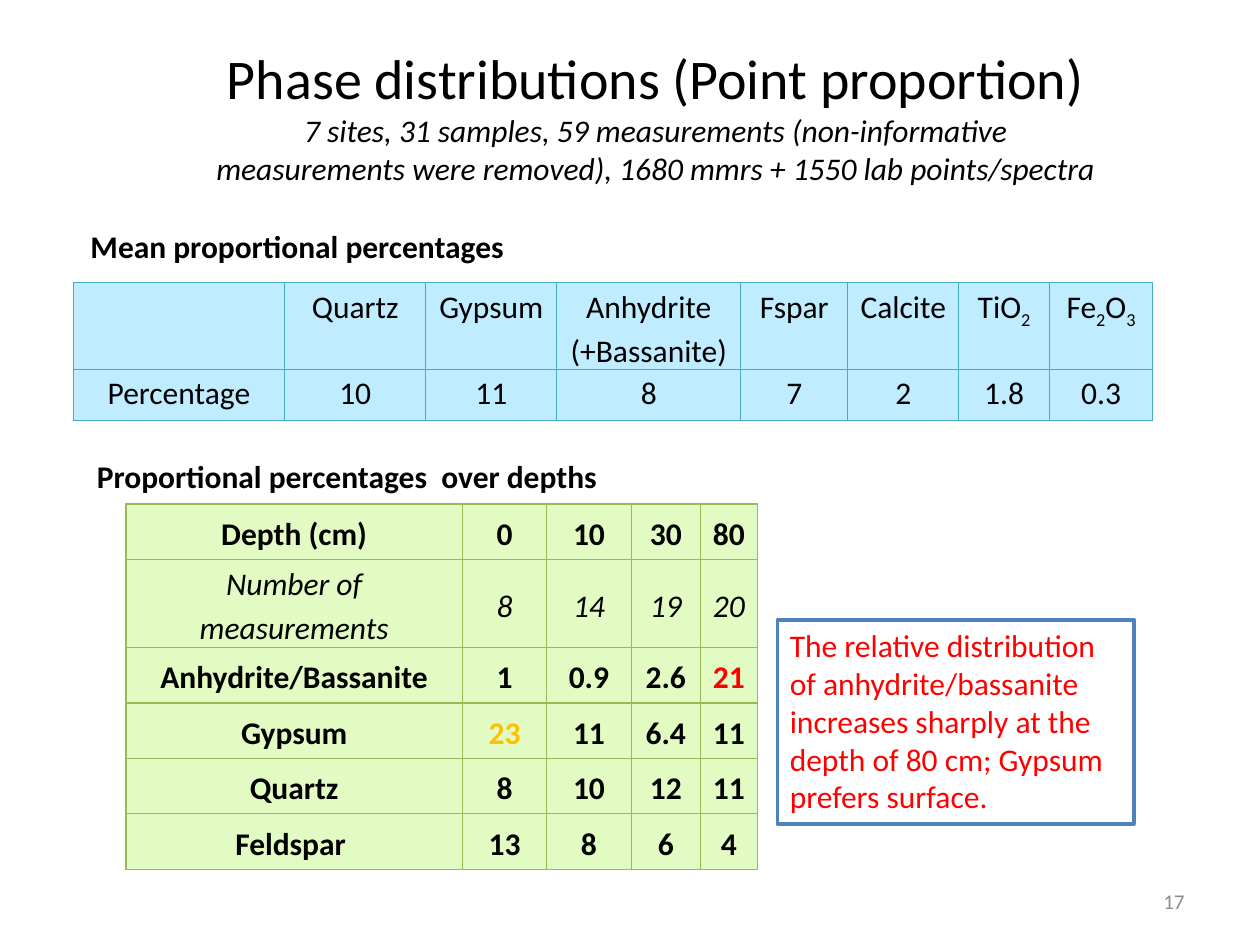
from itertools import groupby

from lxml.etree import fromstring
from pptx import Presentation
from pptx.dml.color import RGBColor
from pptx.enum.shapes import MSO_SHAPE
from pptx.enum.text import MSO_ANCHOR, PP_ALIGN
from pptx.util import Inches, Pt

BLACK = RGBColor(0x00, 0x00, 0x00)
RED = RGBColor(0xFF, 0x00, 0x00)
ORANGE = RGBColor(0xFF, 0xC0, 0x00)
GRAY = RGBColor(0x8C, 0x8C, 0x8C)
BLUE = RGBColor(0x4F, 0x81, 0xBD)
LIGHT_BLUE = RGBColor(0xBF, 0xEC, 0xFF)
TEAL = RGBColor(0x46, 0xAA, 0xC5)
LIGHT_GREEN = RGBColor(0xE2, 0xFB, 0xC2)
GREEN = RGBColor(0x98, 0xB9, 0x55)
NS = "http://schemas.openxmlformats.org/drawingml/2006/main"


def style(p, size=18, color=BLACK, bold=False, italic=False, align=PP_ALIGN.LEFT):
    p.alignment = align
    p.font.name = "Calibri"
    p.font.size = Pt(size)
    p.font.color.rgb = color
    p.font.bold = bold
    p.font.italic = italic


def add_grid(left, top, widths, heights, rows, fill, border, anchor):
    frame = slide.shapes.add_table(len(rows), len(widths), Inches(left), Inches(top),
                                   Inches(sum(widths)), Inches(sum(heights)))
    table = frame.table
    table.first_row = table.horz_banding = False
    for col, width in zip(table.columns, widths):
        col.width = Inches(width)
    for row, height, values in zip(table.rows, heights, rows):
        row.height = Inches(height)
        for cell, value in zip(row.cells, values):
            cell.fill.solid()
            cell.fill.fore_color.rgb = fill
            cell.vertical_anchor = anchor
            cell.margin_left = cell.margin_right = Inches(0.07)
            cell.margin_top = cell.margin_bottom = 0
            cell.text = value
            for p in cell.text_frame.paragraphs:
                style(p, align=PP_ALIGN.CENTER)
                p.line_spacing = 1.15
            tcPr = cell._tc.get_or_add_tcPr()
            for i, side in enumerate("LRTB"):
                tcPr.insert(i, fromstring(
                    f'<a:ln{side} xmlns:a="{NS}" w="9525"><a:solidFill>'
                    f'<a:srgbClr val="{border}"/></a:solidFill></a:ln{side}>'))
    return table


prs = Presentation()
prs.slide_width, prs.slide_height = Inches(10), Inches(7.5)
slide = prs.slides.add_slide(prs.slide_layouts[5])

title = slide.shapes.title
title.left, title.top = Inches(1.58), Inches(0.25)
title.width, title.height = Inches(7.25), Inches(1.33)
tf = title.text_frame
tf.vertical_anchor = MSO_ANCHOR.MIDDLE
p = tf.paragraphs[0]
style(p, 32, align=PP_ALIGN.CENTER)
p.add_run().text = "Phase distributions (Point proportion)"
p.add_line_break()
r = p.add_run()
r.text = ("7 sites, 31 samples, 59 measurements (non-informative measurements "
          "were removed), 1680 mmrs + 1550 lab points/spectra")
r.font.size = Pt(18)
r.font.italic = True

labels = [
    ("Mean proportional percentages", 0.62, 1.75, 4.5, 18, BLACK, True, PP_ALIGN.LEFT),
    ("Proportional percentages  over depths", 0.67, 3.58, 8.67, 18, BLACK, True, PP_ALIGN.LEFT),
    ("17", 7.17, 6.95, 2.33, 12, GRAY, False, PP_ALIGN.RIGHT),
]
for text, left, top, width, size, color, bold, align in labels:
    box = slide.shapes.add_textbox(Inches(left), Inches(top), Inches(width), Inches(0.4))
    tf = box.text_frame
    tf.word_wrap = True
    tf.vertical_anchor = MSO_ANCHOR.MIDDLE
    tf.text = text
    style(tf.paragraphs[0], size, color, bold, align=align)

mean_rows = [
    ["", "Quartz", "Gypsum", "Anhydrite\n(+Bassanite)", "Fspar", "Calcite", "", ""],
    ["Percentage", "10", "11", "8", "7", "2", "1.8", "0.3"],
]
mean_table = add_grid(0.58, 2.24, [1.68, 1.12, 1.04, 1.46, 0.85, 0.88, 0.72, 0.82],
                      [0.69, 0.41], mean_rows, LIGHT_BLUE, TEAL, MSO_ANCHOR.TOP)
for col, formula in [(6, "TiO2"), (7, "Fe2O3")]:
    p = mean_table.cell(0, col).text_frame.paragraphs[0]
    for is_digit, chars in groupby(formula, str.isdigit):
        r = p.add_run()
        r.text = "".join(chars)
        if is_digit:
            r._r.get_or_add_rPr().set("baseline", "-25000")

depth_rows = [
    ["Depth (cm)", "0", "10", "30", "80"],
    ["Number of measurements", "8", "14", "19", "20"],
    ["Anhydrite/Bassanite", "1", "0.9", "2.6", "21"],
    ["Gypsum", "23", "11", "6.4", "11"],
    ["Quartz", "8", "10", "12", "11"],
    ["Feldspar ", "13", "8", "6", "4"],
]
depth_table = add_grid(1, 4, [2.67, 0.67, 0.67, 0.55, 0.45], [0.44, 0.7] + [0.44] * 4,
                       depth_rows, LIGHT_GREEN, GREEN, MSO_ANCHOR.MIDDLE)
for i, row in enumerate(depth_table.rows):
    for cell in row.cells:
        font = cell.text_frame.paragraphs[0].font
        font.bold = i != 1
        font.italic = i == 1
for row, col, color in [(2, 4, RED), (3, 1, ORANGE)]:
    depth_table.cell(row, col).text_frame.paragraphs[0].font.color.rgb = color

note = slide.shapes.add_shape(MSO_SHAPE.RECTANGLE, Inches(6.17), Inches(4.92),
                              Inches(2.83), Inches(1.62))
note.shadow.inherit = False
note.fill.background()
note.line.color.rgb = BLUE
note.line.width = Pt(2)
tf = note.text_frame
tf.word_wrap = True
tf.vertical_anchor = MSO_ANCHOR.TOP
tf.text = ("The relative distribution of anhydrite/bassanite increases sharply "
           "at the depth of 80 cm; Gypsum prefers surface.")
p = tf.paragraphs[0]
style(p, color=RED)
p.space_before = p.space_after = Pt(6)

prs.save("out.pptx")
